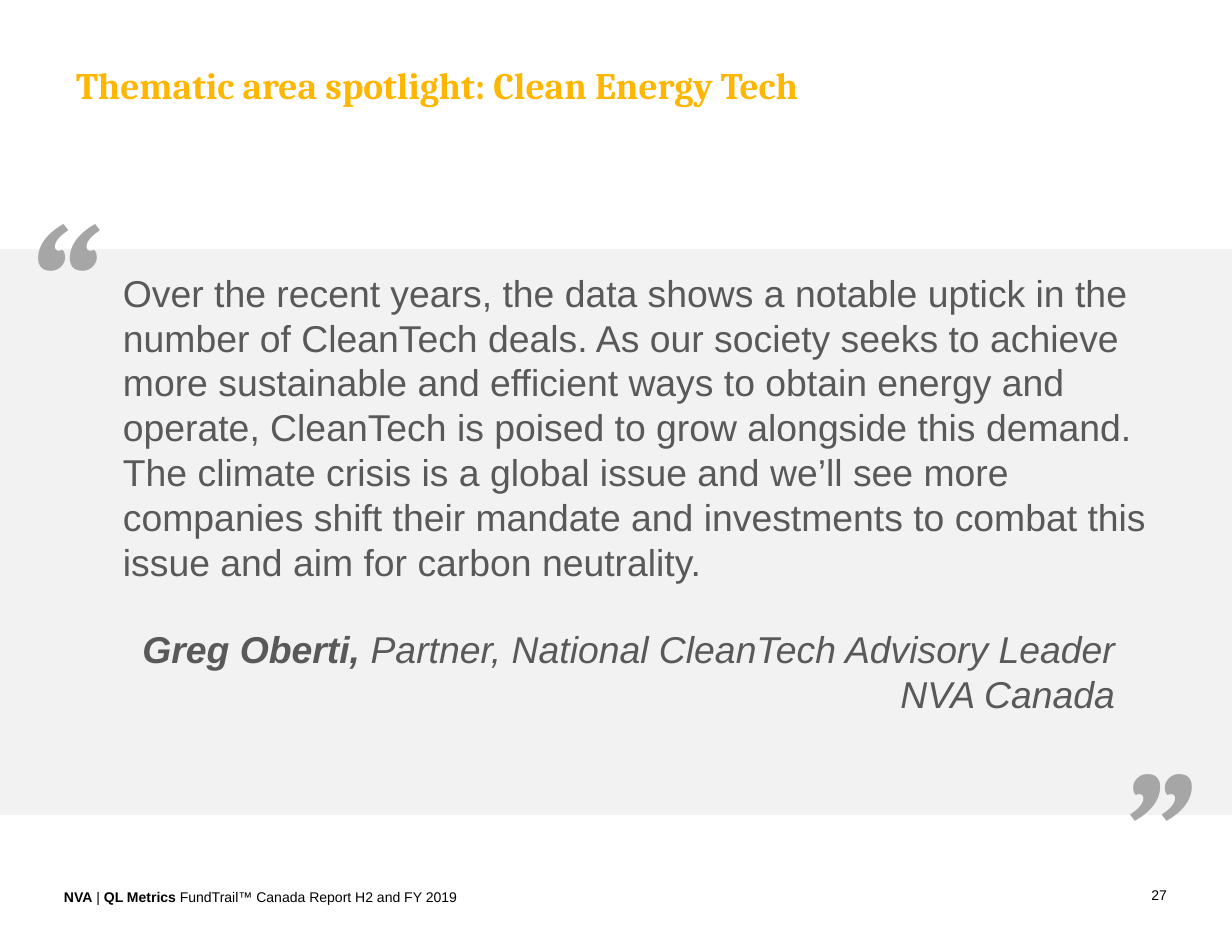
"""Build the Clean Energy Tech quotation slide."""
from pptx import Presentation
from pptx import util as u
from pptx.dml.color import RGBColor
from pptx.enum import shapes, text

SCALE = 914400 / 112
THEME = {
    "title": {"name": "Cambria", "size": 24, "color": "FFB600", "bold": True},
    "quote": {"name": "Arial", "size": 24, "color": "595959"},
    "speaker": {"name": "Arial", "size": 24, "color": "595959", "italic": True},
    "mark": {"name": "Cambria", "size": 115, "color": "A6A6A6", "bold": True, "italic": True},
    "footer": {"name": "Arial", "size": 9, "color": "000000"},
    "band": "F2F2F2",
    "title fill": "FFFFFF",
}
LEFT, CENTER, RIGHT = text.PP_ALIGN.LEFT, text.PP_ALIGN.CENTER, text.PP_ALIGN.RIGHT


def px(*lengths):
    return [u.Emu(round(length * SCALE)) for length in lengths]


def write(shape, box, style, runs, align=LEFT):
    shape.left, shape.top, shape.width, shape.height = px(*box)
    frame = shape.text_frame
    settings = dict.fromkeys(("margin_left", "margin_top", "margin_right", "margin_bottom"), 0)
    settings |= {"word_wrap": True, "auto_size": text.MSO_AUTO_SIZE.NONE,
                 "vertical_anchor": text.MSO_ANCHOR.TOP}
    for name, value in settings.items():
        setattr(frame, name, value)
    paragraph = frame.paragraphs[0]
    paragraph.alignment = align
    for words, extra in runs:
        for index, line in enumerate(words.split("\n")):
            if index:
                paragraph.add_line_break()
            run = paragraph.add_run()
            run.text = line
            for name, value in {**THEME[style], **extra}.items():
                if name == "color":
                    run.font.color.rgb = RGBColor.from_string(value)
                else:
                    setattr(run.font, name, u.Pt(value) if name == "size" else value)


presentation = Presentation()
presentation.slide_width, presentation.slide_height = px(1232, 952)
slide = presentation.slides.add_slide(presentation.slide_layouts[5])
title = slide.shapes.title

band = slide.shapes.add_shape(shapes.MSO_SHAPE.RECTANGLE, *px(0, 249, 1232, 566))
band.shadow.inherit = False
band.line.fill.background()
for shape, color in ((band, "band"), (title, "title fill")):
    shape.fill.solid()
    shape.fill.fore_color.rgb = RGBColor.from_string(THEME[color])

write(title, (76, 62, 842, 45), "title",
      [("Thematic area spotlight: Clean Energy Tech", {})])

quote = (
    "Over the recent years, the data shows a notable uptick in the number of CleanTech deals. "
    "As our society seeks to achieve more sustainable and efficient ways to obtain energy and "
    "operate, CleanTech is poised to grow alongside this demand. The climate crisis is a global "
    "issue and we’ll see more companies shift their mandate and investments to combat this issue "
    "and aim for carbon neutrality."
)
bold = {"bold": True}
text_boxes = [
    ((0, 172, 118, 93), "mark", [("“", {})], CENTER),
    ((1086, 722, 130, 93), "mark", [("”", {})], CENTER),
    ((123, 270, 1038, 292), "quote", [(quote, {})], LEFT),
    ((77, 626, 1038, 141), "speaker",
     [("Greg Oberti, ", bold),
      ("Partner, National CleanTech Advisory Leader\nNVA Canada", {})], RIGHT),
    ((64, 889, 539, 17), "footer",
     [("NVA", bold), (" | ", {}), ("QL Metrics ", bold),
      ("FundTrail™ Canada Report H2 and FY 2019", {})], LEFT),
    ((962, 886, 205, 19), "footer", [("27", {})], RIGHT),
]
for box, style, runs, align in text_boxes:
    write(slide.shapes.add_textbox(0, 0, 0, 0), box, style, runs, align)

presentation.save("out.pptx")
